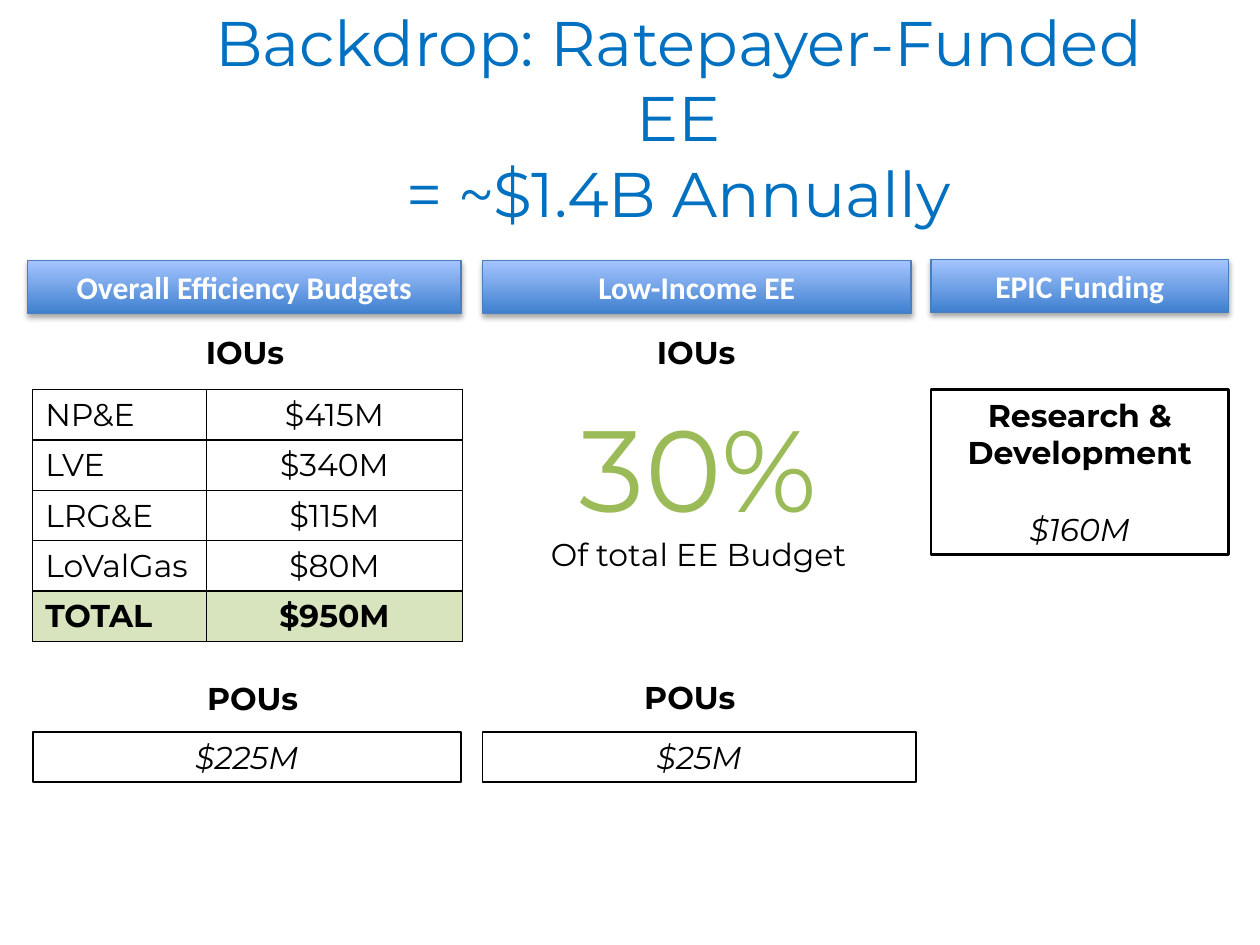
from lxml import etree
from pptx import Presentation
from pptx import util as u
from pptx.dml.color import RGBColor
from pptx.enum import shapes, text
from pptx.oxml import ns

HUES = {"title": "0070C0", "ink": "000000", "white": "FFFFFF", "low": "3F80CE",
        "high": "A4C4FF", "edge": "4B7EBC", "total": "D7E4BD", "share": "9BBB59"}
COLS, ROWS = 100, 75
MID = text.MSO_ANCHOR.MIDDLE
HEAD = {"name": "Calibri", "size": u.Pt(18), "bold": True, "hue": "white"}
BODY = {"name": "Montserrat", "size": u.Pt(18), "hue": "ink"}
BOLD = {**BODY, "bold": True}
SLANT = {**BODY, "italic": True}
BUDGETS = [("NP&E", "$415M"), ("LVE", "$340M"), ("LRG&E", "$115M"),
           ("LoValGas", "$80M"), ("TOTAL", "$950M")]

prs = Presentation()
prs.slide_width, prs.slide_height = u.Inches(10), u.Inches(7.5)
slide = prs.slides.add_slide(prs.slide_layouts[5])


def color(key):
    return RGBColor.from_string(HUES[key])


def place(box):
    x, y, w, h = box
    dx, dy = prs.slide_width / COLS, prs.slide_height / ROWS
    return [round(v) for v in (x * dx, y * dy, w * dx, h * dy)]


def style(font, form):
    for key, val in form.items():
        if key == "hue":
            font.color.rgb = color(val)
        else:
            setattr(font, key, val)


def write(frame, lines, anchor=text.MSO_ANCHOR.TOP, align=text.PP_ALIGN.CENTER):
    frame.word_wrap = True
    frame.vertical_anchor = anchor
    for i, (words, form, gap) in enumerate(lines):
        para = frame.add_paragraph() if i else frame.paragraphs[0]
        para.text, para.alignment = words, align
        if gap:
            para.space_before = u.Pt(gap)
        for run in para.runs:
            style(run.font, form)


def label(box, lines):
    write(slide.shapes.add_textbox(*place(box)).text_frame, lines)


def frame(box, lines, width=1):
    shape = slide.shapes.add_shape(shapes.MSO_SHAPE.RECTANGLE, *place(box))
    shape.shadow.inherit = False
    shape.fill.background()
    shape.line.color.rgb = color("ink")
    shape.line.width = u.Pt(width)
    write(shape.text_frame, lines)


def cast(shape):
    shape.shadow.inherit = False
    effects = shape._element.spPr.find(ns.qn("a:effectLst"))
    drop = etree.SubElement(effects, ns.qn("a:outerShdw"), blurRad="40000",
                            dist="23000", dir="5400000", rotWithShape="0")
    tint = etree.SubElement(drop, ns.qn("a:srgbClr"), val=HUES["ink"])
    etree.SubElement(tint, ns.qn("a:alpha"), val="35000")


def banner(box, words):
    shape = slide.shapes.add_shape(shapes.MSO_SHAPE.RECTANGLE, *place(box))
    shape.fill.gradient()
    shape.fill.gradient_angle = 90
    for stop, key, spot in zip(shape.fill.gradient_stops, ("low", "high"), (0, 1)):
        stop.color.rgb, stop.position = color(key), spot
    shape.line.color.rgb = color("edge")
    shape.line.width = u.Pt(0.75)
    cast(shape)
    write(shape.text_frame, [(words, HEAD, 0)], MID)


def border(cell):
    props = cell._tc.get_or_add_tcPr()
    for i, side in enumerate(("lnL", "lnR", "lnT", "lnB")):
        line = etree.Element(ns.qn(f"a:{side}"), w="12700")
        fill = etree.SubElement(line, ns.qn("a:solidFill"))
        etree.SubElement(fill, ns.qn("a:srgbClr"), val=HUES["ink"])
        props.insert(i, line)


def ledger(box, rows):
    table = slide.shapes.add_table(len(rows), 2, *place(box)).table
    table.first_row = table.horz_banding = False
    table.columns[0].width, table.columns[1].width = u.Inches(1.38), u.Inches(2.03)
    aligns = text.PP_ALIGN.LEFT, text.PP_ALIGN.CENTER
    for r, row in enumerate(rows):
        last = r == len(rows) - 1
        for c, words in enumerate(row):
            cell = table.cell(r, c)
            write(cell.text_frame, [(words, BOLD if last else BODY, 0)], align=aligns[c])
            if last:
                cell.fill.solid()
                cell.fill.fore_color.rgb = color("total")
            else:
                cell.fill.background()
            border(cell)


def heading(box):
    title = slide.shapes.title
    title.left, title.top, title.width, title.height = place(box)
    form = {"name": "Montserrat", "size": u.Pt(36), "hue": "title"}
    write(title.text_frame, [("Backdrop: Ratepayer-Funded EE\v= ~$1.4B Annually", form, 0)], MID)
    title.text_frame.auto_size = text.MSO_AUTO_SIZE.NONE


def overall(box):
    x, y, w, h = box
    banner((x, y, w, 4.2), "Overall Efficiency Budgets")
    label((x - 0.1, y + 5.2, 34.7, 4), [("IOUs", BOLD, 0)])
    ledger((x + 0.4, y + 10.2, w - 0.4, 20), BUDGETS)
    label((x + 0.5, y + 32.7, 34.7, 4), [("POUs", BOLD, 0)])
    frame((x + 0.4, y + h - 4, w - 0.4, 4), [("$225M", SLANT, 0)])


def lower(box):
    x, y, w, h = box
    banner((x, y, w - 0.4, 4.2), "Low-Income EE")
    label((x - 0.4, y + 5.2, 34.7, 4), [("IOUs", BOLD, 0)])
    big = {**BODY, "size": u.Pt(66), "hue": "share"}
    label((x + 1.1, y + 10.3, 32.1, 15.1),
          [("30%", big, 0), ("Of total EE Budget", BODY, 0)])
    label((x - 0.9, y + 32.6, 34.7, 4), [("POUs", BOLD, 0)])
    frame((x, y + h - 4, w, 4), [("$25M", SLANT, 0)])


def epic(box):
    x, y, w, h = box
    banner((x, y, w, 4.2), "EPIC Funding")
    frame((x, y + h - 13.1, w, 13.1),
          [("Research & Development", BOLD, 0), ("$160M", SLANT, 22)], 1.5)


heading((13.6, 3.4, 80.5, 11.7))
overall((2.2, 20.7, 34.4, 41.4))
lower((38.3, 20.7, 34.4, 41.4))
epic((73.9, 20.6, 23.6, 23.4))
prs.save("out.pptx")
